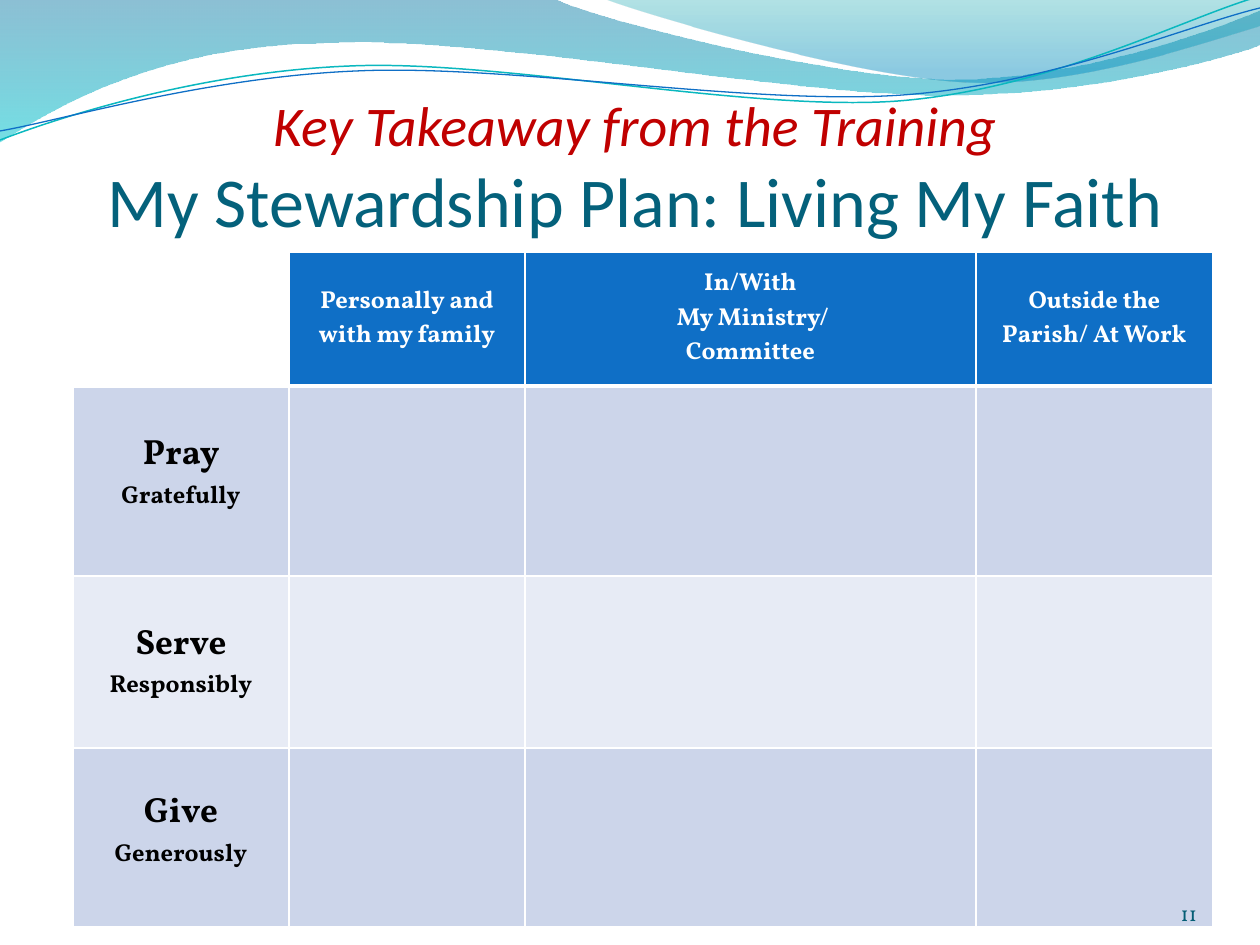
from pptx import Presentation
from pptx.dml.color import RGBColor as Rgb
from pptx.enum.text import MSO_ANCHOR as Anchor, PP_ALIGN as Align
from pptx.oxml import parse_xml
from pptx.util import Pt

NS = 'xmlns:a="http://schemas.openxmlformats.org/drawingml/2006/main"'
PX = 914400 / 126

THEME = dict(
    head="Calibri", body="Vollkorn",
    red="C00000", teal="04617B", page="045D75",
    blue="0F6FC6", aqua="0AB8BF", white="FFFFFF", black="000000",
    dark="CCD5EA", pale="E7EBF5",
    lead=32, title=40, verb=20, small=14, num=12,
)

TITLE = [("Key Takeaway from the Training\n", dict(size="lead", color="red", italic=True)),
         ("My Stewardship Plan: Living My Faith", dict(size="title", color="teal"))]
HEADS = [[], ["Personally and with my family"],
         ["In/With", " My Ministry/", "Committee"],
         ["Outside the Parish/ At Work"]]
PLAN = [("Pray ", "Gratefully\n", "dark", (45, 36)),
        ("Serve ", "Responsibly", "pale", (6, 6)),
        ("Give ", "Generously", "dark", (41, 66))]
COLS = [216, 236, 451, 237]
ROWS = [134, 172, 172, 172]

WAVES = [
    ((0, 0), [
        [(554, -1)],
        [(600, 21), (837, 79), (955, 79)],
        [(1075, 79), (1207, 33), (1260, 11)],
        [(1261, 45)],
        [(1235, 55), (1096, 96), (940, 95)],
        [(784, 95), (481, 35), (324, 43)],
        [(163, 45), (58, 105), (-1, 142)],
        [(0, 0)]],
     [(0, "0074A1", 45), (100, "00C6CF", 55)]),
    ((604, -1), [
        [(641, 14), (859, 78), (969, 82)],
        [(1079, 87), (1211, 40), (1260, 26)],
        [(1260, 0)],
        [(604, -1)]],
     [(0, "00A1A9", 30), (80, "008BBF", 45)]),
]
LINES = [
    ((0, 140), [
        [(60, 117), (199, 72), (349, 66)],
        [(498, 59), (747, 112), (898, 101)],
        [(1050, 89), (1182, 19), (1257, -3)]], "aqua", 0.85),
    ((0, 131), [
        [(59, 121), (207, 77), (357, 71)],
        [(508, 64), (751, 106), (903, 95)],
        [(1053, 84), (1186, 26), (1260, 8)]], "blue", 0.75),
]


def emu(n):
    return round(n * PX)


def rgb(name):
    return Rgb.from_string(THEME[name])


def draw(slide, start, parts, closed):
    pen = slide.shapes.build_freeform(*map(emu, start))
    pen.add_line_segments([tuple(map(emu, p)) for part in parts for p in part],
                          close=closed)
    shape = pen.convert_to_shape()
    shape.shadow.inherit = False
    steps = iter(shape.element.findall(".//{*}lnTo"))
    for part in parts:
        nodes = [next(steps) for _ in part]
        if len(part) == 3:
            curve = parse_xml(f"<a:cubicBezTo {NS}/>")
            nodes[0].addprevious(curve)
            for node in nodes:
                curve.append(node[0])
                node.getparent().remove(node)
    return shape


def shade(shape, stops):
    shape.line.fill.background()
    shape.fill.background()
    gs = "".join(f'<a:gs pos="{pos * 1000}"><a:srgbClr val="{hue}">'
                 f'<a:alpha val="{alpha * 1000}"/></a:srgbClr></a:gs>'
                 for pos, hue, alpha in stops)
    grad = parse_xml(f'<a:gradFill {NS}><a:gsLst>{gs}</a:gsLst>'
                     '<a:lin ang="5400000" scaled="0"/></a:gradFill>')
    props = shape.element.spPr
    props.replace(props.find("{*}noFill"), grad)


def write(frame, paras, font="body", size="small", color="black",
          bold=False, italic=False, align=Align.CENTER):
    frame.word_wrap = True
    for i, runs in enumerate(paras):
        para = frame.paragraphs[0] if i == 0 else frame.add_paragraph()
        para.alignment = align
        for text, own in runs:
            look = dict(size=size, color=color, italic=italic) | own
            run = para.add_run()
            run.text = text.rstrip("\n")
            run.font.name = THEME[font]
            run.font.size = Pt(THEME[look["size"]])
            run.font.color.rgb = rgb(look["color"])
            run.font.bold = bold
            run.font.italic = look["italic"]
            if text.endswith("\n"):
                para.add_line_break()


def label(slide, box, paras, top=0, **look):
    frame = slide.shapes.add_textbox(*map(emu, box)).text_frame
    frame.margin_left = frame.margin_right = frame.margin_bottom = 0
    frame.margin_top = emu(top)
    frame.vertical_anchor = Anchor.BOTTOM
    write(frame, paras, **look)


def paint(cell, fill, edges):
    cell.fill.solid()
    cell.fill.fore_color.rgb = rgb(fill)
    cell.vertical_anchor = Anchor.MIDDLE
    props = cell._tc.get_or_add_tcPr()
    for i, (side, width) in enumerate(edges.items()):
        props.insert(i, parse_xml(
            f'<a:ln{side} {NS} w="{Pt(width)}"><a:solidFill>'
            f'<a:srgbClr val="{THEME["white"]}"/></a:solidFill></a:ln{side}>'))


def grid(slide):
    table = slide.shapes.add_table(len(ROWS), len(COLS), emu(73), emu(252),
                                   emu(sum(COLS)), emu(sum(ROWS))).table
    for col, width in zip(table.columns, COLS):
        col.width = emu(width)
    for row, height in zip(table.rows, ROWS):
        row.height = emu(height)
    for c, lines in enumerate(HEADS):
        cell = table.cell(0, c)
        paint(cell, "blue" if lines else "white", dict(L=1, R=1, T=1, B=3))
        if lines:
            write(cell.text_frame, [[(line, {})] for line in lines],
                  color="white", bold=True)
    for r, (verb, how, fill, (above, below)) in enumerate(PLAN, 1):
        for c in range(len(COLS)):
            paint(table.cell(r, c), fill, dict(L=1, R=1, T=3 if r == 1 else 1, B=1))
        cell = table.cell(r, 0)
        cell.margin_top, cell.margin_bottom = emu(above), emu(below)
        write(cell.text_frame, [[(verb, dict(size="verb")), (how, {})]], bold=True)


def main():
    deck = Presentation()
    deck.slide_width, deck.slide_height = emu(1260), emu(945)
    slide = deck.slides.add_slide(deck.slide_layouts[6])
    for start, parts, stops in WAVES:
        shade(draw(slide, start, parts, True), stops)
    for start, parts, hue, width in LINES:
        curve = draw(slide, start, parts, False)
        curve.fill.background()
        curve.line.color.rgb = rgb(hue)
        curve.line.width = Pt(width)
    label(slide, (63, 84, 1144, 158), [TITLE], top=6, font="head")
    grid(slide)
    label(slide, (1092, 876, 105, 50), [[("11", {})]],
          size="num", color="page", align=Align.RIGHT)
    deck.save("out.pptx")


if __name__ == "__main__":
    main()
